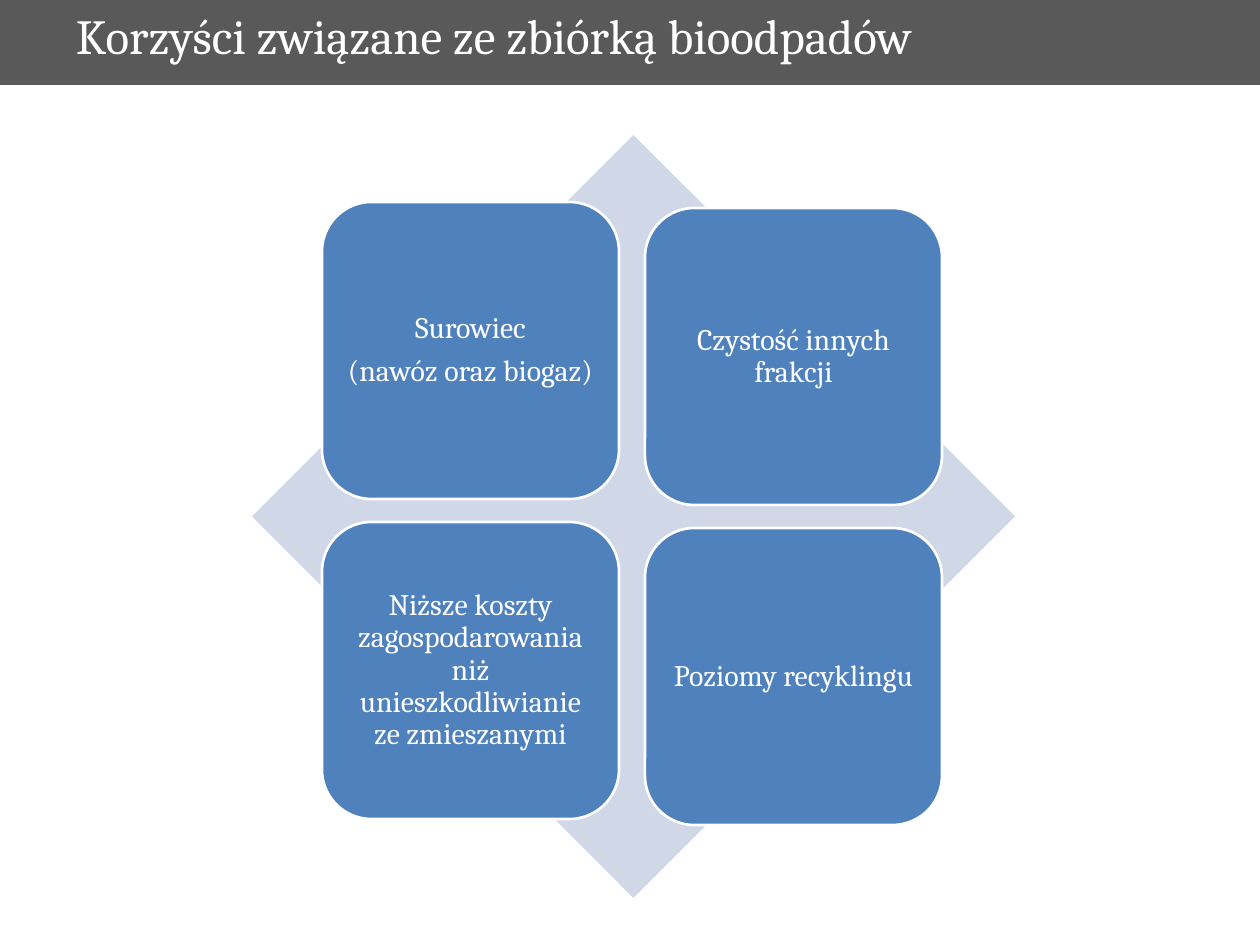
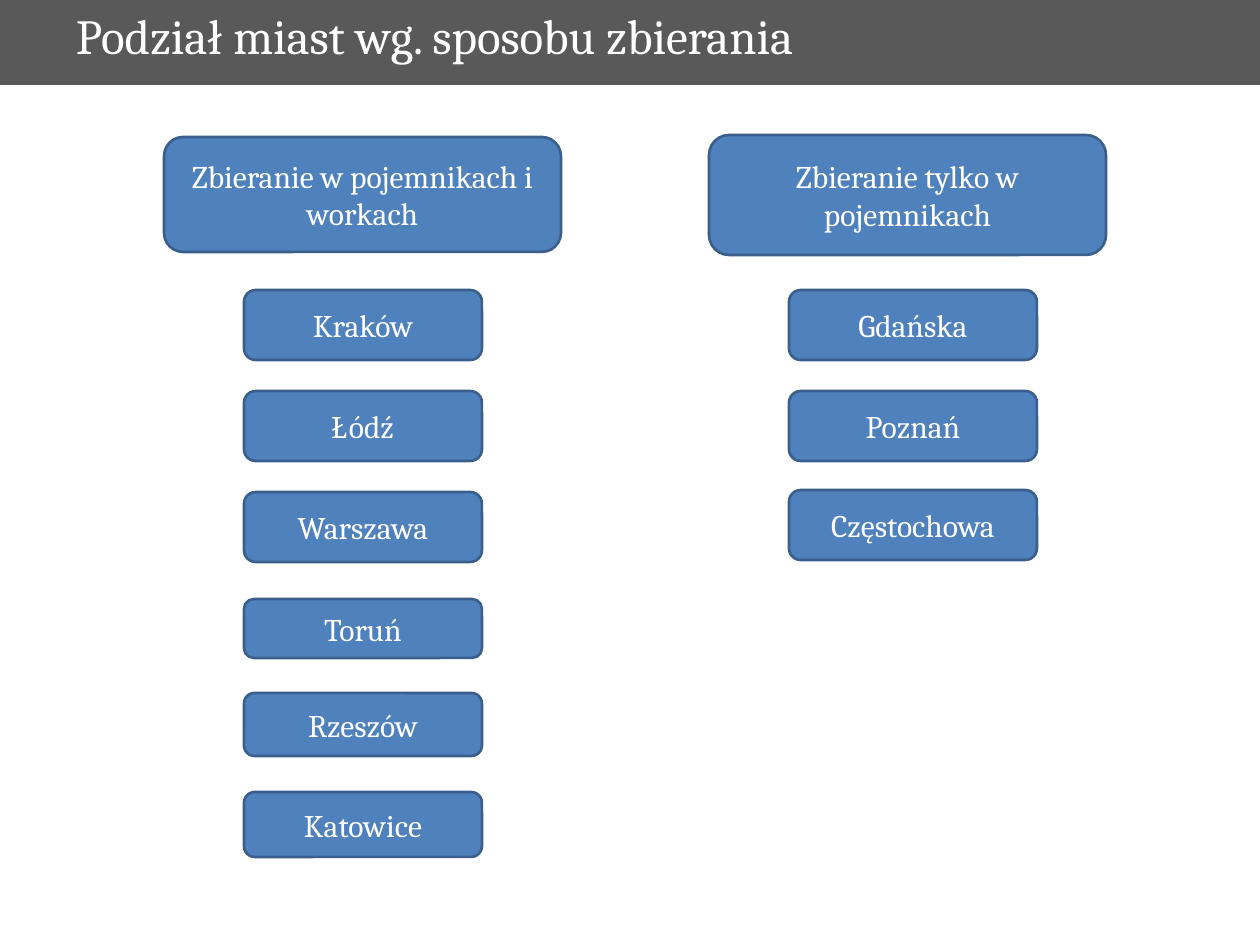
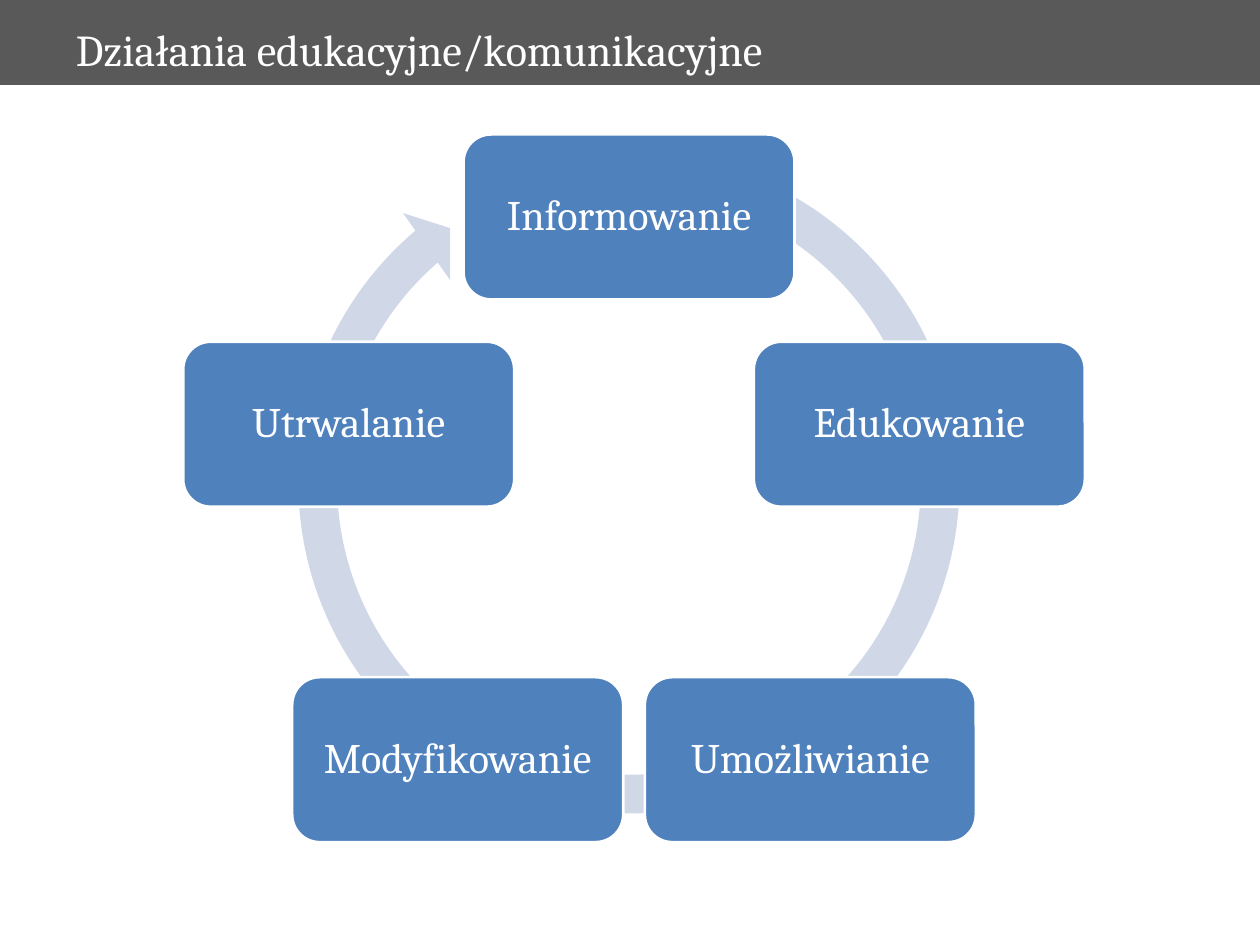
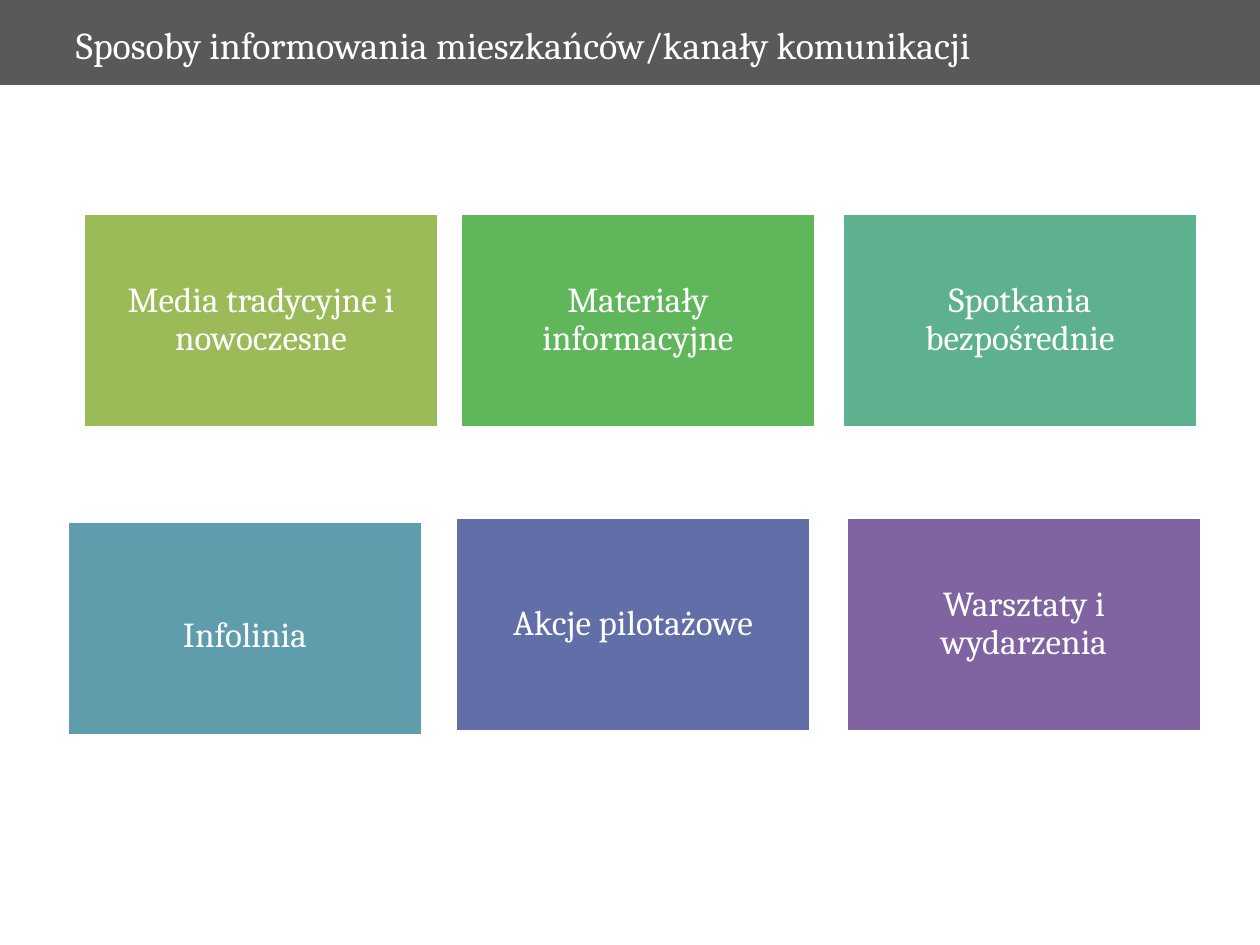
import math

from pptx import Presentation
from pptx import util as u
from pptx.dml.color import RGBColor
from pptx.enum import shapes, text

PX = 914400 / 126
FONT = "Cambria"
COLORS = {
    "band": "595959", "white": "FFFFFF", "blue": "4F81BD", "edge": "3A5F8C",
    "pale": "D0D8E8", "olive": "9BBB59", "green": "5FB65B", "mint": "5DB18E",
    "teal": "5F9DAC", "indigo": "626EA7", "violet": "8064A2",
}
SHAPE = shapes.MSO_SHAPE


def px(*lengths):
    return [u.Emu(round(length * PX)) for length in lengths]


def color(name):
    return RGBColor.from_string(COLORS[name])


def write(frame, words, size, align=text.PP_ALIGN.CENTER,
          anchor=text.MSO_ANCHOR.MIDDLE, margins=(13, 6, 13, 6),
          spacing=None, after=None):
    """Fill a text frame, one paragraph per line; margins are left, top, right, bottom."""
    frame.word_wrap = True
    frame.vertical_anchor = anchor
    (frame.margin_left, frame.margin_top,
     frame.margin_right, frame.margin_bottom) = px(*margins)
    for index, line in enumerate(words.split("\n")):
        paragraph = frame.paragraphs[0] if index == 0 else frame.add_paragraph()
        paragraph.alignment = align
        if spacing:
            paragraph.line_spacing = spacing
        if after:
            paragraph.space_after = u.Pt(after)
        run = paragraph.add_run()
        run.text = line
        run.font.name = FONT
        run.font.size = u.Pt(size)
        run.font.color.rgb = color("white")


def draw(slide, kind, box, fill, edge=None):
    part = slide.shapes.add_shape(kind, *px(*box))
    part.shadow.inherit = False
    part.fill.solid()
    part.fill.fore_color.rgb = color(fill)
    if edge:
        part.line.color.rgb = color(edge)
        part.line.width = u.Pt(1.5)
    else:
        part.line.fill.background()
    return part


def card(slide, box, words, size, kind=SHAPE.ROUNDED_RECTANGLE,
         fill="blue", edge="white", **format):
    write(draw(slide, kind, box, fill, edge).text_frame, words, size, **format)


def titled_slide(deck, title, size=28, top=0):
    """Blank slide with the dark band and its title."""
    slide = deck.slides.add_slide(deck.slide_layouts[6])
    draw(slide, SHAPE.RECTANGLE, (0, 0, 1260, 85), "band")
    heading = slide.shapes.add_textbox(*px(63, top, 1134, 76 - top))
    write(heading.text_frame, title, size, align=text.PP_ALIGN.LEFT,
          anchor=text.MSO_ANCHOR.TOP)
    return slide


def benefits_matrix(slide, left, top, size, columns):
    """Diamond with two columns of benefits, the right one slightly lower."""
    draw(slide, SHAPE.DIAMOND, (left, top, size, size), "pale")
    for col, benefits in enumerate(columns):
        for row, benefit in enumerate(benefits):
            box = (left + 70 + 323 * col, top + 67 + 6 * col + 320 * row, 297, 297)
            card(slide, box, benefit, 17, margins=(9, 9, 9, 9), spacing=0.9, after=6)


def city_column(slide, left, top, head_height, method, city_width, cities):
    """Collection method above its cities; each city has an offset and a height."""
    card(slide, (left, top, 397, head_height), method, 18, edge="edge")
    for city, offset, height in cities:
        card(slide, (left + 80, top + offset, city_width, height), city, 18, edge="edge")


def action_cycle(slide, left, top, size, actions):
    """Circular arrow with the actions at the corners of a pentagon."""
    arrow = draw(slide, SHAPE.CIRCULAR_ARROW, (left, top, size, size), "pale")
    for index, value in enumerate((0.055, 3.307, 137.661, 173.92, 0.058)):
        arrow.adjustments[index] = value
    width, height, radius = 331, 165, 300
    for index, action in enumerate(actions):
        angle = 2 * math.pi * index / len(actions)
        # The first card sits on the arrow's axis, the others just right of it
        center_x = left + size / 2 + (5 if index else 0) + radius * math.sin(angle)
        center_y = top + 386 - radius * math.cos(angle)
        card(slide, (center_x - width / 2, center_y - height / 2, width, height),
             action, 24, margins=(12, 12, 12, 12), spacing=0.9, after=8)


def channel_tiles(slide, left, top, channels):
    """Coloured tiles, each with its offset in the region."""
    for channel, fill, x, y, lowered in channels:
        card(slide, (left + x, top + y, 354, 213), channel, 20,
             kind=SHAPE.RECTANGLE, fill=fill, spacing=0.9, after=7,
             margins=(10, 10 + lowered, 10, 10))


def main():
    deck = Presentation()
    deck.slide_width, deck.slide_height = px(1260, 945)

    # Benefits
    slide = titled_slide(deck, "Korzyści związane ze zbiórką bioodpadów")
    benefits_matrix(slide, 252, 135, 763, [
        ["Surowiec\n(nawóz oraz biogaz)",
         "Niższe koszty zagospodarowania niż unieszkodliwianie ze zmieszanymi"],
        ["Czystość innych frakcji", "Poziomy recyklingu"],
    ])

    # Cities by collection method
    slide = titled_slide(deck, "Podział miast wg. sposobu zbierania")
    city_column(slide, 164, 137, 115, "Zbieranie w pojemnikach i workach", 238, [
        ("Kraków", 153, 70), ("Łódź", 254, 70), ("Warszawa", 355, 70),
        ("Toruń", 462, 59), ("Rzeszów", 556, 63), ("Katowice", 655, 65),
    ])
    city_column(slide, 709, 135, 120, "Zbieranie tylko w pojemnikach", 248, [
        ("Gdańska", 155, 70), ("Poznań", 256, 70), ("Częstochowa", 355, 70),
    ])

    # Education and communication
    slide = titled_slide(deck, "Działania edukacyjne/komunikacyjne", size=25.2, top=16)
    action_cycle(slide, 277, 131, 704, [
        "Informowanie", "Edukowanie", "Umożliwianie", "Modyfikowanie", "Utrwalanie",
    ])

    # Communication channels
    slide = titled_slide(deck, "Sposoby informowania mieszkańców/kanały komunikacji",
                         size=21.6, top=16)
    channel_tiles(slide, 68, 214, [
        ("Media tradycyjne i nowoczesne", "olive", 16, 0, 0),
        ("Materiały informacyjne", "green", 393, 0, 0),
        ("Spotkania bezpośrednie", "mint", 775, 0, 0),
        ("Infolinia", "teal", 0, 308, 16),
        ("Akcje pilotażowe", "indigo", 388, 304, 0),
        ("Warsztaty i wydarzenia", "violet", 779, 304, 0),
    ])

    deck.save("out.pptx")


if __name__ == "__main__":
    main()
